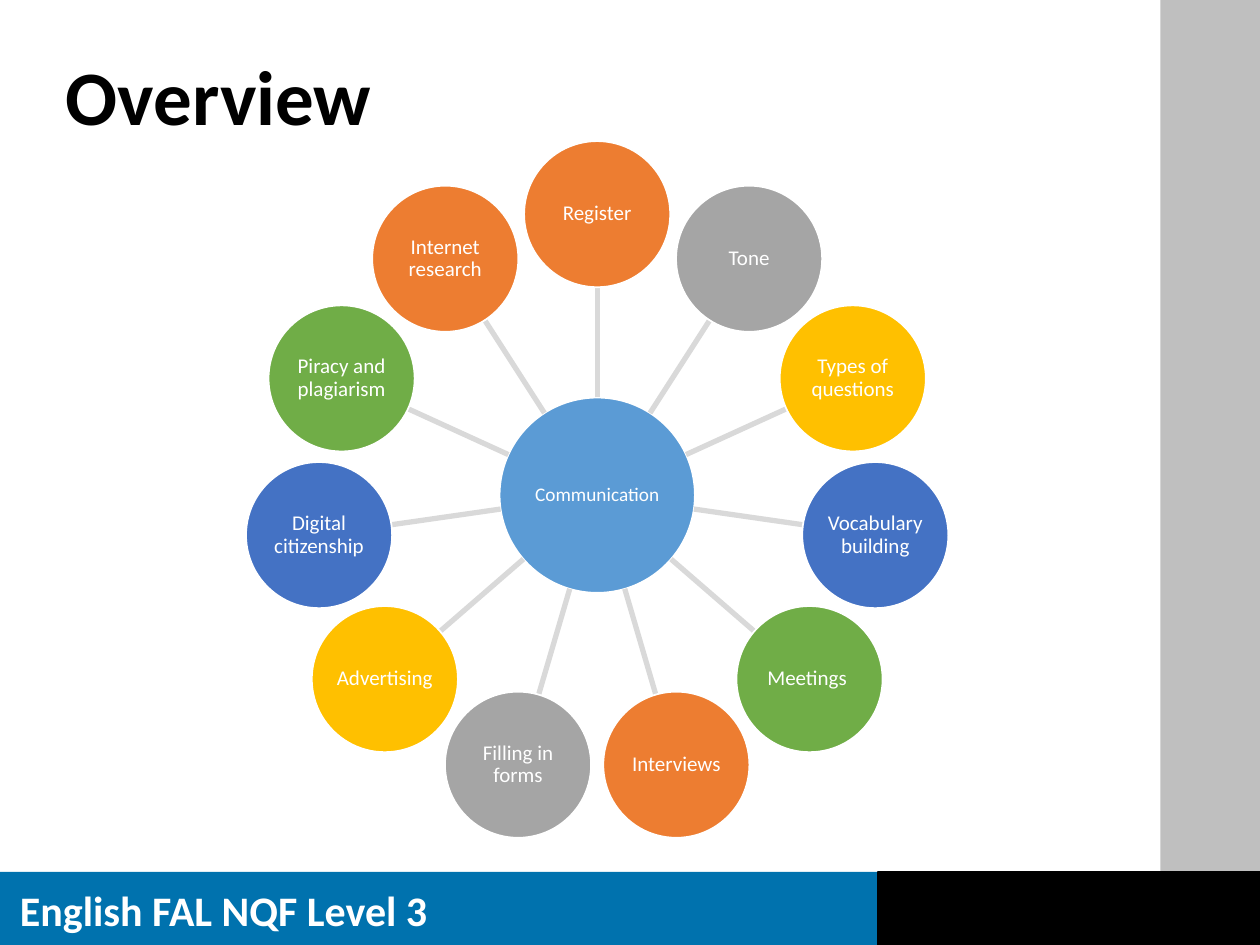
from math import cos, pi, sin
from lxml.etree import SubElement
from pptx import Presentation
from pptx.dml.color import RGBColor
from pptx.enum.shapes import MSO_CONNECTOR, MSO_SHAPE
from pptx.enum.text import MSO_ANCHOR, MSO_AUTO_SIZE, PP_ALIGN
from pptx.oxml.ns import qn
from pptx.util import Inches, Pt

HUES = {
    "side": "BFBFBF", "band": "0072AE", "black": "000000", "white": "FFFFFF",
    "hub": "5B9BD5", "spoke": "D9D9D9", "orange": "ED7D31", "gray": "A5A5A5",
    "gold": "FFC000", "blue": "4472C4", "green": "70AD47",
}
CYCLE = ["orange", "gray", "gold", "blue", "green"]
TOPICS = [
    "Register", "Tone", "Types of questions", "Vocabulary building",
    "Meetings ", "Interviews", "Filling in forms", "Advertising",
    "Digital citizenship", "Piracy and plagiarism", "Internet research",
]
RGB = {name: RGBColor.from_string(code) for name, code in HUES.items()}
PAD = Inches(0.01)
BALL = {
    "frame": {"word_wrap": True, "vertical_anchor": MSO_ANCHOR.MIDDLE,
              "margin_left": PAD, "margin_right": PAD,
              "margin_top": PAD, "margin_bottom": PAD},
    "para": {"alignment": PP_ALIGN.CENTER, "line_spacing": 0.9},
    "font": {"name": "Calibri"},
}
HEAD = {
    "frame": {"word_wrap": True, "vertical_anchor": MSO_ANCHOR.MIDDLE,
              "auto_size": MSO_AUTO_SIZE.NONE},
    "para": {"alignment": PP_ALIGN.LEFT, "line_spacing": 0.9},
    "font": {"name": "Calibri", "bold": True},
}
FOOT = {
    "frame": {"word_wrap": True},
    "para": {"alignment": PP_ALIGN.LEFT},
    "font": {"name": "Calibri", "bold": True},
}


def write(shape, text, size, hue, look):
    frame = shape.text_frame
    frame.text = text
    para = frame.paragraphs[0]
    font = para.runs[0].font
    font.size = Pt(size)
    font.color.rgb = RGB[hue]
    for part, item in (("frame", frame), ("para", para), ("font", font)):
        for key, value in look[part].items():
            setattr(item, key, value)


def draw(kind, box, fill, edge=None):
    shape = slide.shapes.add_shape(kind, *[Inches(n) for n in box])
    shape.shadow.inherit = False
    shape.fill.solid()
    shape.fill.fore_color.rgb = RGB[fill]
    if edge:
        shape.line.color.rgb = RGB[edge]
        shape.line.width = Pt(1)
    else:
        shape.line.fill.background()
    return shape


deck = Presentation()
deck.slide_width, deck.slide_height = Inches(10), Inches(7.5)
slide = deck.slides.add_slide(deck.slide_layouts[5])

draw(MSO_SHAPE.RECTANGLE, (9.21, 0, 0.79, 7.49), "side")
draw(MSO_SHAPE.RECTANGLE, (0, 6.92, 10, 0.58), "band")
draw(MSO_SHAPE.RECTANGLE, (6.97, 6.92, 3.03, 0.58), "black", "black")
foot = slide.shapes.add_textbox(Inches(0.06), Inches(6.97), Inches(3.75), Inches(0.5))
write(foot, "English FAL NQF Level 3", 24, "white", FOOT)

title = slide.shapes.title
title.left, title.top = Inches(0.42), Inches(0.4)
title.width, title.height = Inches(8.65), Inches(0.79)
write(title, "Overview", 44, "black", HEAD)

mid_x, mid_y = 4.74, 3.93
hub, ball = 1.55, 1.16
ring = 2.23
inner, outer = hub / 2, ring - ball / 2

core = draw(MSO_SHAPE.OVAL, (mid_x - hub / 2, mid_y - hub / 2, hub, hub), "hub", "white")
write(core, "Communication", 11, "white", BALL)

for i, topic in enumerate(TOPICS):
    turn = 2 * pi * i / len(TOPICS)
    dx, dy = sin(turn), -cos(turn)
    ends = [Inches(n) for r in (inner, outer) for n in (mid_x + r * dx, mid_y + r * dy)]
    spoke = slide.shapes.add_connector(MSO_CONNECTOR.STRAIGHT, *ends)
    spoke.line.color.rgb = RGB["spoke"]
    spoke.line.width = Pt(3)
    SubElement(spoke._element.spPr, qn("a:effectLst"))
    left, top = mid_x + ring * dx - ball / 2, mid_y + ring * dy - ball / 2
    hue = CYCLE[i % len(CYCLE)]
    disc = draw(MSO_SHAPE.OVAL, (left, top, ball, ball), hue, "white")
    write(disc, topic, 12, "white", BALL)

deck.save("out.pptx")
